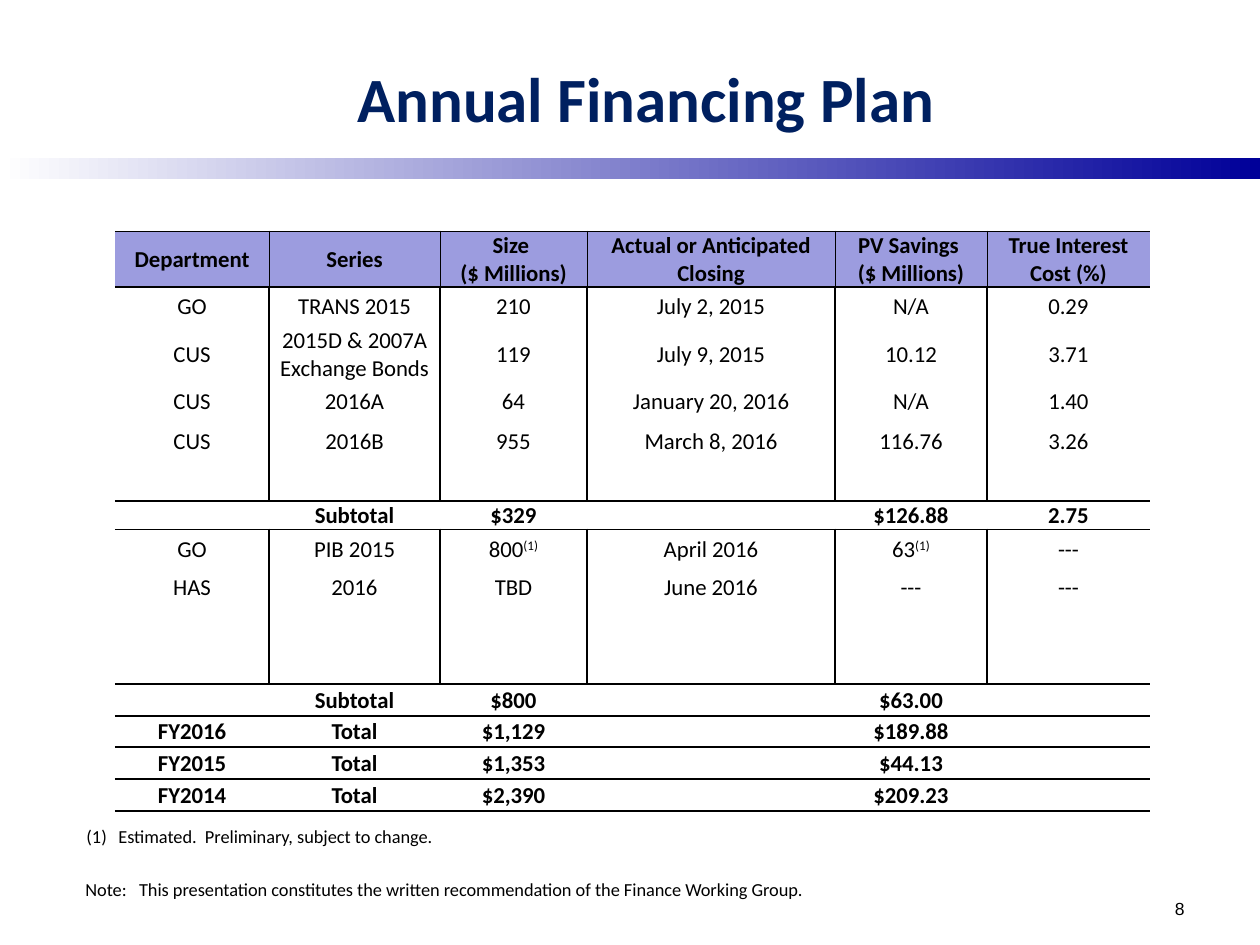
from pptx import Presentation
from pptx.dml.color import RGBColor
from pptx.enum.shapes import MSO_SHAPE
from pptx.enum.text import MSO_ANCHOR as Anchor, PP_ALIGN as Align
from pptx.oxml.ns import qn
from pptx.util import Emu, Pt
from lxml.etree import SubElement

PX_PER_INCH = 126
COLORS = {"title": "002060", "text": "000000", "header": "9C9CDF",
          "band_start": "FFFFFF", "band_end": "000099"}

# Table content: "^" starts a superscript, a line break starts a paragraph
COLUMN_WIDTHS = [154, 171, 147, 248, 152, 163]
ROWS = [
    (56, ["Department", "Series", "Size \n($ Millions)",
          "Actual or Anticipated Closing", "PV Savings \n($ Millions)",
          "True Interest Cost (%)"]),
    (39, ["GO", "TRANS 2015", "210", "July 2, 2015", "N/A", "0.29"]),
    (56, ["CUS", "2015D & 2007A Exchange Bonds", "119", "July 9, 2015", "10.12", "3.71"]),
    (39, ["CUS", "2016A", "64", "January 20, 2016", "N/A", "1.40"]),
    (40, ["CUS", "2016B", "955", "March 8, 2016", "116.76", "3.26"]),
    (40, [""] * 6),
    (28, ["", "Subtotal", "$329", "", "$126.88", "2.75"]),
    (40, ["GO", "PIB 2015", "800^(1)", "April 2016", "63^(1)", "---"]),
    (37, ["HAS", "2016", "TBD", "June 2016", "---", "---"]),
    (39, [""] * 6),
    (39, [""] * 6),
    (32, ["", "Subtotal", "$800", "", "$63.00", ""]),
    (31, ["FY2016", "Total", "$1,129", "", "$189.88", ""]),
    (32, ["FY2015", "Total", "$1,353", "", "$44.13", ""]),
    (32, ["FY2014", "Total", "$2,390", "", "$209.23", ""]),
]
SUMMARY_ROWS = {6, 11, 12, 13, 14}
RULED_BELOW = {0, 5, 10} | SUMMARY_ROWS


def px(length):
    return Emu(round(length * 914400 / PX_PER_INCH))


def rgb(name):
    return RGBColor.from_string(COLORS[name])


def add_run(paragraph, text, size, color="text", bold=False, font="Calibri"):
    run = paragraph.add_run()
    run.text = text
    run.font.name = font
    run.font.size = Pt(size)
    run.font.bold = bold
    run.font.color.rgb = rgb(color)
    return run


def add_text(slide, box, text, size, align=Align.LEFT, anchor=Anchor.TOP, **style):
    frame = slide.shapes.add_textbox(*map(px, box)).text_frame
    frame.word_wrap = True
    frame.vertical_anchor = anchor
    paragraph = frame.paragraphs[0]
    paragraph.alignment = align
    add_run(paragraph, text, size, **style)
    return paragraph


def number_paragraph(paragraph, indent):
    properties = paragraph._p.get_or_add_pPr()
    properties.set("marL", str(px(indent)))
    properties.set("indent", str(-px(indent)))
    SubElement(properties, qn("a:buFont"), typeface="Calibri")
    SubElement(properties, qn("a:buAutoNum"), type="arabicParenBoth")


def add_band(slide, box):
    band = slide.shapes.add_shape(MSO_SHAPE.RECTANGLE, *map(px, box))
    band.shadow.inherit = False
    band.line.fill.background()
    band.fill.gradient()
    band.fill.gradient_angle = 0
    for stop, name in zip(band.fill.gradient_stops, ("band_start", "band_end")):
        stop.color.rgb = rgb(name)


def set_borders(cell, widths):
    properties = cell._tc.get_or_add_tcPr()
    for side in "LRTB":
        width = widths[side]
        line = SubElement(properties, qn(f"a:ln{side}"), w=str(Pt(width)))
        if width:
            fill = SubElement(line, qn("a:solidFill"))
            SubElement(fill, qn("a:srgbClr"), val=COLORS["text"])
        else:
            SubElement(line, qn("a:noFill"))


def border_widths(row, column):
    vertical = 0 if row in SUMMARY_ROWS else 0.5 if row == 0 else 1
    return {"L": vertical if column > 0 else 0,
            "R": vertical if column < len(COLUMN_WIDTHS) - 1 else 0,
            "T": 0.5 if row == 0 else int(row - 1 in RULED_BELOW),
            "B": int(row in RULED_BELOW)}


def fill_cell(cell, text, bold):
    cell.margin_left = cell.margin_right = cell.margin_top = px(1)
    cell.margin_bottom = 0
    cell.vertical_anchor = Anchor.MIDDLE
    frame = cell.text_frame
    for index, line in enumerate(text.split("\n")):
        paragraph = frame.add_paragraph() if index else frame.paragraphs[0]
        paragraph.alignment = Align.CENTER
        if not line:
            paragraph.font.size = Pt(13)
            continue
        base, _, superscript = line.partition("^")
        add_run(paragraph, base, 13, bold=bold)
        if superscript:
            run = add_run(paragraph, superscript, 13, bold=bold)
            run._r.get_or_add_rPr().set("baseline", "30000")


def add_plan_table(slide, left, top):
    size = sum(COLUMN_WIDTHS), sum(height for height, _ in ROWS)
    table = slide.shapes.add_table(len(ROWS), len(COLUMN_WIDTHS),
                                   *map(px, (left, top, *size))).table
    table.first_row = table.horz_banding = False
    for column, width in zip(table.columns, COLUMN_WIDTHS):
        column.width = px(width)
    for row, (height, texts) in enumerate(ROWS):
        table.rows[row].height = px(height)
        for column, text in enumerate(texts):
            cell = table.cell(row, column)
            set_borders(cell, border_widths(row, column))
            if row == 0:
                cell.fill.solid()
                cell.fill.fore_color.rgb = rgb("header")
            else:
                cell.fill.background()
            fill_cell(cell, text, bold=row == 0 or row in SUMMARY_ROWS)


def main():
    presentation = Presentation()
    presentation.slide_width, presentation.slide_height = px(1260), px(945)
    slide = presentation.slides.add_slide(presentation.slide_layouts[6])

    # Gradient band, page number and title
    add_band(slide, (0, 158, 1260, 21))
    add_text(slide, (903, 892, 294, 34), "8", 10, Align.RIGHT, font="Arial")
    add_text(slide, (63, 42, 1166, 110), "Annual Financing Plan", 36,
             Align.CENTER, Anchor.MIDDLE, color="title", bold=True)

    # Financing table
    add_plan_table(slide, 115, 231)

    # Footnotes
    footnote = add_text(slide, (74, 819, 1155, 35),
                        "Estimated.  Preliminary, subject to change.", 10.5)
    number_paragraph(footnote, 32)
    add_text(slide, (73, 872, 1113, 42),
             "Note:   This presentation constitutes the written recommendation "
             "of the Finance Working Group.", 10.5)

    presentation.save("out.pptx")


if __name__ == "__main__":
    main()
